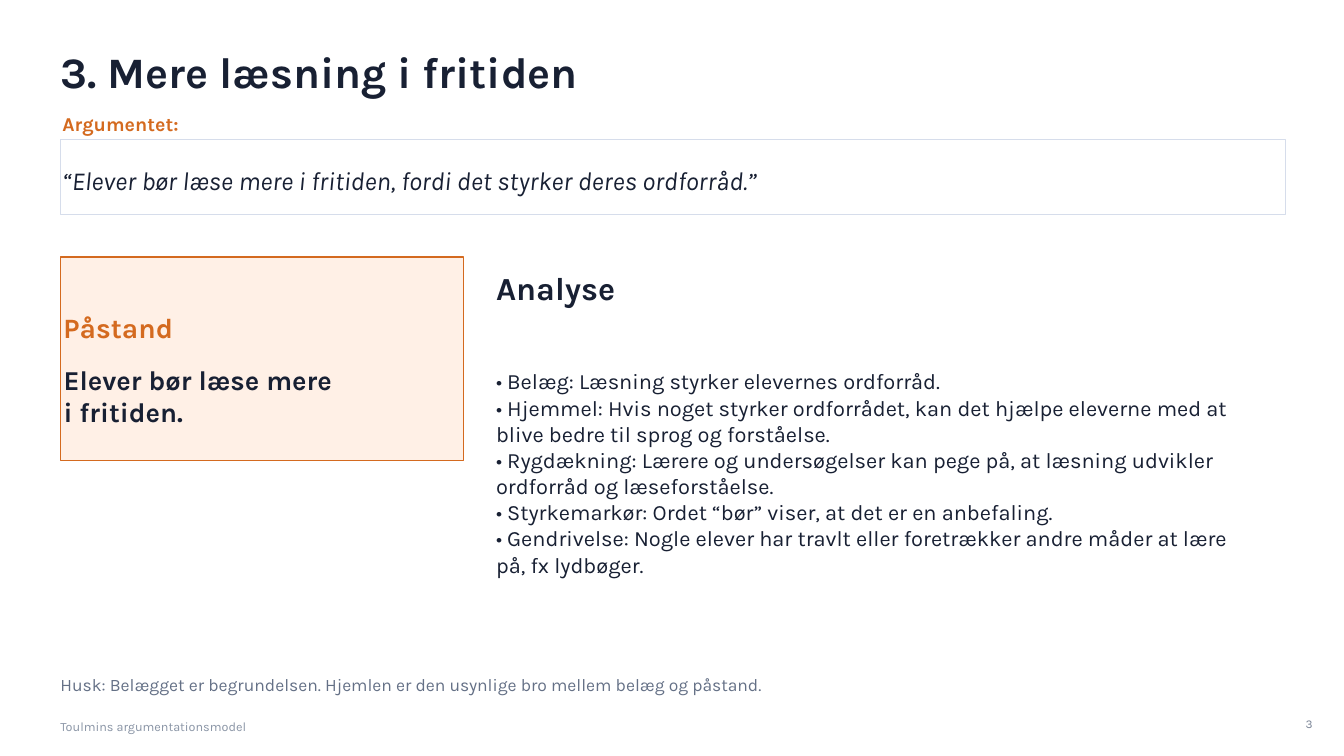
from pptx import Presentation
from pptx.dml.color import RGBColor
from pptx.enum.shapes import MSO_SHAPE as Shape
from pptx.enum.text import MSO_ANCHOR as Anchor, PP_ALIGN as Align
from pptx.util import Inches, Pt

COLORS = {
    "white": "FFFFFF",
    "ink": "182033",
    "orange": "D46A1F",
    "peach": "FFF0E6",
    "border": "D6DDEB",
    "note": "647086",
    "footer": "8994A5",
    "number": "798395",
}
FONT = "Karla"
LEFT = 0.6
CLAIM_LEFT = 0.63
ANALYSIS_LEFT = 4.92

deck = Presentation()
deck.slide_width = Inches(13.33)
deck.slide_height = Inches(7.5)
page = deck.slides.add_slide(deck.slide_layouts[6])


def add_panel(left, top, width, height, fill, line, weight):
    panel = page.shapes.add_shape(
        Shape.RECTANGLE, Inches(left), Inches(top), Inches(width), Inches(height))
    panel.shadow.inherit = False
    panel.fill.solid()
    panel.fill.fore_color.rgb = RGBColor.from_string(COLORS[fill])
    panel.line.color.rgb = RGBColor.from_string(COLORS[line])
    panel.line.width = Pt(weight)


def add_text(left, top, width, height, lines, size, color,
             bold=False, italic=False, align=Align.LEFT):
    box = page.shapes.add_textbox(
        Inches(left), Inches(top), Inches(width), Inches(height))
    frame = box.text_frame
    frame.word_wrap = True
    frame.vertical_anchor = Anchor.MIDDLE
    frame.margin_left = frame.margin_right = 0
    frame.margin_top = frame.margin_bottom = 0
    for index, line in enumerate(lines):
        para = frame.add_paragraph() if index else frame.paragraphs[0]
        para.alignment = align
        span = para.add_run()
        span.text = line
        span.font.name = FONT
        span.font.size = Pt(size)
        span.font.bold = bold
        span.font.italic = italic
        span.font.color.rgb = RGBColor.from_string(COLORS[color])


add_text(LEFT, 0.43, 8.8, 0.56, ["3. Mere læsning i fritiden"], 31, "ink", bold=True)

add_text(0.62, 1.12, 3, 0.22, ["Argumentet:"], 14, "orange", bold=True)
add_panel(LEFT, 1.38, 12.15, 0.75, "white", "border", 0.8)
add_text(0.62, 1.64, 12.1, 0.3,
         ["“Elever bør læse mere i fritiden, fordi det styrker deres ordforråd.”"],
         18.5, "ink", italic=True)

add_panel(LEFT, 2.55, 4, 2.02, "peach", "orange", 1)
add_text(CLAIM_LEFT, 3.05, 3.5, 0.4, ["Påstand"], 20, "orange", bold=True)
add_text(CLAIM_LEFT, 3.55, 3.85, 0.75, ["Elever bør læse mere", "i fritiden."],
         19.5, "ink", bold=True)

analysis = [
    "• Belæg: Læsning styrker elevernes ordforråd.",
    "• Hjemmel: Hvis noget styrker ordforrådet, kan det hjælpe eleverne med at "
    "blive bedre til sprog og forståelse.",
    "• Rygdækning: Lærere og undersøgelser kan pege på, at læsning udvikler "
    "ordforråd og læseforståelse.",
    "• Styrkemarkør: Ordet “bør” viser, at det er en anbefaling.",
    "• Gendrivelse: Nogle elever har travlt eller foretrækker andre måder at lære "
    "på, fx lydbøger.",
]
add_text(ANALYSIS_LEFT, 2.63, 3.1, 0.45, ["Analyse"], 23, "ink", bold=True)
add_text(ANALYSIS_LEFT, 3.55, 7.5, 2.28, analysis, 15.6, "ink")

add_text(LEFT, 6.67, 10.7, 0.25,
         ["Husk: Belægget er begrundelsen. Hjemlen er den usynlige bro mellem "
          "belæg og påstand."], 12.5, "note")
add_text(LEFT, 7.12, 2.7, 0.17, ["Toulmins argumentationsmodel"], 9, "footer")
add_text(12.92, 7.08, 0.1, 0.2, ["3"], 8.5, "number", align=Align.RIGHT)

deck.save("out.pptx")
